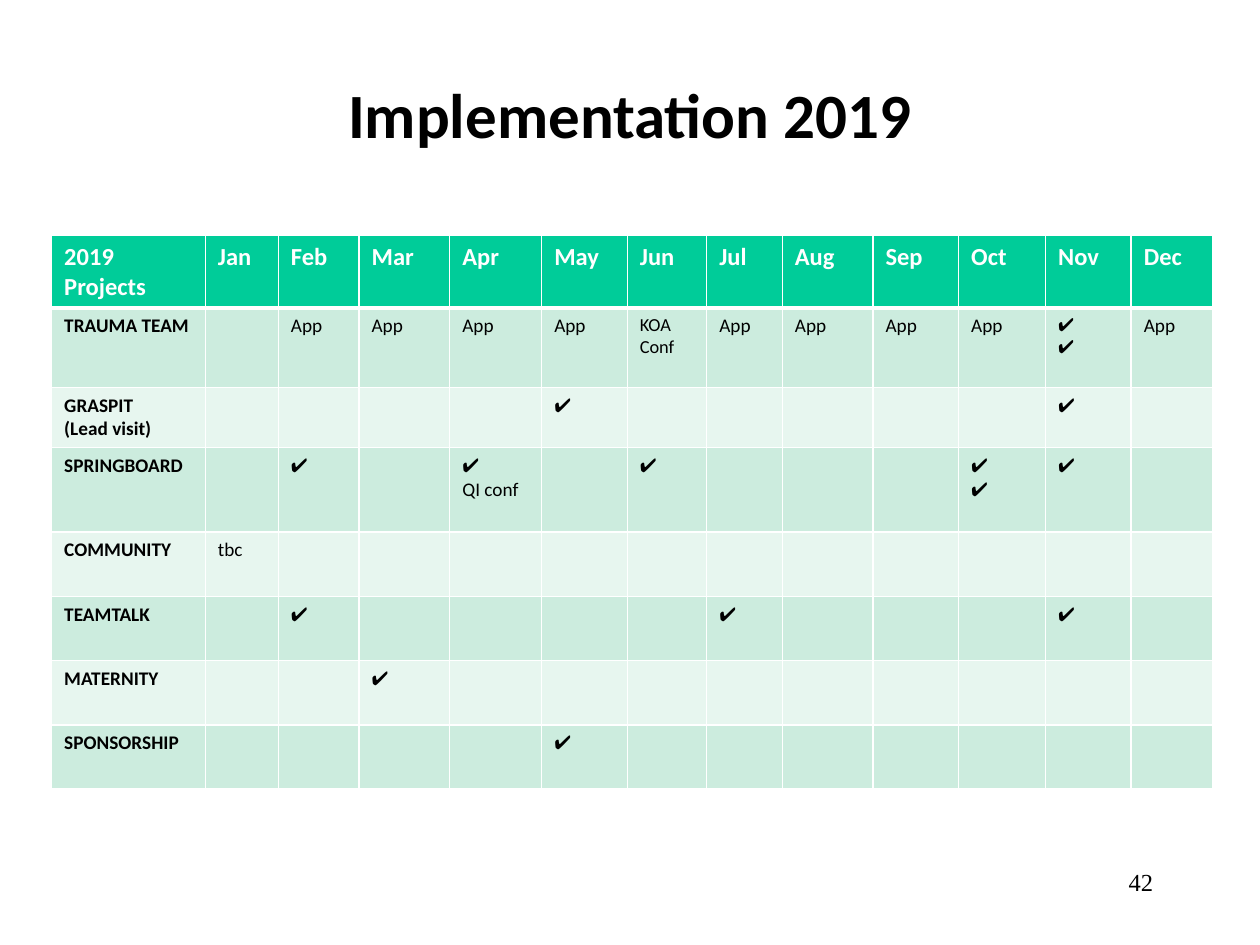
from dataclasses import dataclass

from lxml import etree
from pptx import Presentation
from pptx.dml.color import RGBColor
from pptx.enum import text
from pptx.oxml import ns
from pptx.util import Inches, Pt


@dataclass(frozen=True)
class Theme:
    black: str = "000000"
    white: str = "FFFFFF"
    header: str = "00CC99"
    bands: tuple = ("CCECDE", "E7F6EF")
    font: str = "Calibri"
    number_font: str = "Times New Roman"
    title_size: float = 36
    header_size: float = 14
    body_size: float = 11
    small_size: float = 10.5


theme = Theme()


def write(frame, content, size=theme.body_size, color=theme.black, bold=False,
          font=theme.font, align=text.PP_ALIGN.LEFT):
    frame.word_wrap = True
    frame.text = content
    for paragraph in frame.paragraphs:
        paragraph.alignment = align
        for run in paragraph.runs:
            run.font.name = font
            run.font.size = Pt(size)
            run.font.bold = bold
            run.font.color.rgb = RGBColor.from_string(color)


def add_border(cell, side, points):
    line = etree.SubElement(cell._tc.get_or_add_tcPr(), ns.qn(f"a:ln{side}"), w=str(Pt(points)))
    fill = etree.SubElement(line, ns.qn("a:solidFill"))
    etree.SubElement(fill, ns.qn("a:srgbClr"), val=theme.white)


presentation = Presentation()
presentation.slide_width = Inches(10)
presentation.slide_height = Inches(7.5)
slide = presentation.slides.add_slide(presentation.slide_layouts[5])

title = slide.shapes.title
title.left, title.top = Inches(0.75), Inches(0.67)
title.width, title.height = Inches(8.5), Inches(0.46)
title.text_frame.vertical_anchor = text.MSO_ANCHOR.MIDDLE
write(title.text_frame, "Implementation 2019", size=theme.title_size, bold=True,
      align=text.PP_ALIGN.CENTER)

months = ["Jan", "Feb", "Mar", "Apr", "May", "Jun", "Jul", "Aug", "Sep", "Oct", "Nov", "Dec"]
check = "✔️"
two_checks = f"{check}\n{check}"
trauma_team = dict.fromkeys(months[1:], "App") | {"Jun": "KOA\nConf", "Nov": two_checks}
projects = [
    ("TRAUMA TEAM", trauma_team),
    ("GRASPIT\n(Lead visit)", {"May": check, "Nov": check}),
    ("SPRINGBOARD", {"Feb": check, "Apr": f"{check}\nQI conf", "Jun": check,
                     "Oct": two_checks, "Nov": check}),
    ("COMMUNITY", {"Jan": "tbc"}),
    ("TEAMTALK", {"Feb": check, "Jul": check, "Nov": check}),
    ("MATERNITY", {"Mar": check}),
    ("SPONSORSHIP", {"May": check}),
]
rows = [["2019 Projects", *months]]
rows += [[name, *(events.get(month, "") for month in months)] for name, events in projects]
column_widths = [1.22, 0.58, 0.64, 0.72, 0.73, 0.68, 0.63, 0.6, 0.72, 0.68, 0.69, 0.68, 0.65]
row_heights = [0.56, 0.63, 0.48, 0.67] + [0.51] * 4

table = slide.shapes.add_table(
    len(rows), len(column_widths), Inches(0.41), Inches(1.87),
    Inches(sum(column_widths)), Inches(sum(row_heights))).table
for column, width in zip(table.columns, column_widths):
    column.width = Inches(width)
for row, height in zip(table.rows, row_heights):
    row.height = Inches(height)

for row_index, row in enumerate(rows):
    is_header = row_index == 0
    for column_index, content in enumerate(row):
        cell = table.cell(row_index, column_index)
        add_border(cell, "L", 1)
        add_border(cell, "R", 1)
        add_border(cell, "T", 3 if row_index == 1 else 1)
        add_border(cell, "B", 3 if is_header else 1)
        cell.fill.solid()
        cell.fill.fore_color.rgb = RGBColor.from_string(
            theme.header if is_header else theme.bands[(row_index - 1) % 2])
        if is_header:
            size = theme.header_size
        elif row_index == 1 and "\n" in content:
            size = theme.small_size
        else:
            size = theme.body_size
        write(cell.text_frame, content, size=size, bold=is_header or column_index == 0,
              color=theme.white if is_header else theme.black)

page_number = slide.shapes.add_textbox(Inches(7.17), Inches(6.83), Inches(2.08), Inches(0.5))
write(page_number.text_frame, "42", size=theme.header_size, font=theme.number_font,
      align=text.PP_ALIGN.RIGHT)

presentation.save("out.pptx")
